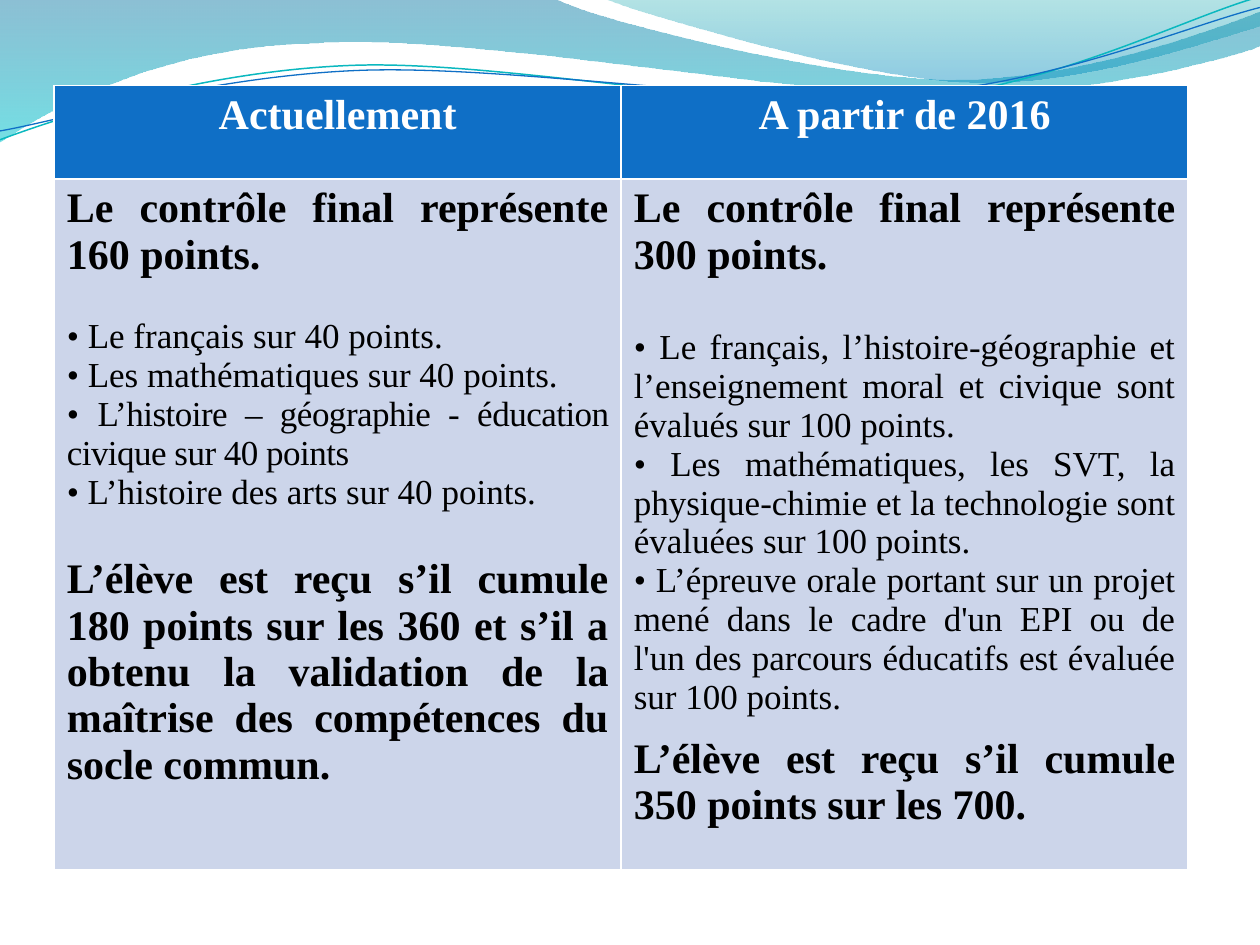
from math import cos, radians, sin

from pptx import Presentation
from pptx.dml.color import RGBColor
from pptx.enum.text import PP_ALIGN as Align
from pptx.oxml.ns import qn
from pptx.util import Inches, Pt
from lxml.etree import SubElement

FONT = "Times New Roman"
WHITE = RGBColor(0xFF, 0xFF, 0xFF)
BLACK = RGBColor(0, 0, 0)
BLUE = RGBColor(0x0F, 0x6F, 0xC6)
PALE = RGBColor(0xCC, 0xD5, 0xEA)
TEAL = RGBColor(0x0A, 0xB8, 0xBF)
DEEP_BLUE = RGBColor(0, 0x74, 0xA1)
CYAN = RGBColor(0, 0xC6, 0xCF)
SEA = RGBColor(0, 0xA1, 0xA9)
SKY = RGBColor(0, 0x8B, 0xBF)

# Wave outlines: points are (x, y) for lines, six numbers for Bezier curves
WAVES = [
    ([(0, 0), (4.4, -0.01), (4.76, 0.17, 6.64, 0.63, 7.58, 0.63),
      (8.53, 0.63, 9.58, 0.26, 10, 0.09), (10.01, 0.36),
      (9.83, 0.44, 8.7, 0.76, 7.46, 0.75), (6.22, 0.75, 3.82, 0.28, 2.57, 0.34),
      (1.29, 0.36, 0.46, 0.83, -0.01, 1.13)],
     [(DEEP_BLUE, 45), (CYAN, 55)]),
    ([(4.79, -0.01), (5.09, 0.11, 6.82, 0.62, 7.69, 0.65),
      (8.56, 0.69, 9.61, 0.32, 10, 0.21), (10, 0)],
     [(SEA, 30), (SKY, 45)]),
]
# Strokes are tilted about their middle
TILT = -2.7
STROKES = [
    ([(0, 1.11), (0.48, 0.93, 1.58, 0.57, 2.77, 0.52),
      (3.95, 0.47, 5.93, 0.89, 7.13, 0.8), (8.33, 0.71, 9.38, 0.15, 9.98, -0.02)],
     TEAL, 0.85),
    ([(0, 1.04), (0.47, 0.96, 1.64, 0.61, 2.83, 0.56),
      (4.03, 0.51, 5.97, 0.84, 7.17, 0.75), (8.36, 0.67, 9.41, 0.21, 10, 0.06)],
     BLUE, 0.75),
]

# Table paragraphs: style, space before in points, runs of (text, letter spacing)
HEADERS = ["Actuellement", "A partir de 2016"]
BODIES = [
    [("strong", 0, [("Le contrôle final représente 160 points.", 0)]),
     ("item", 22.5, [("• Le français sur 40 points.", 0)]),
     ("item", 0, [("• Les mathématiques sur 40 points.", 0)]),
     ("item", 0, [("• ", 0),
                  ("L’histoire – géographie - éducation civique sur 40 points", -0.3)]),
     ("bullet", 0, [(" L’histoire des arts sur 40 points.", 0)]),
     ("strong", 25.5, [("L’élève est reçu s’il cumule 180 points sur les 360 et s’il a "
                        "obtenu la validation de la maîtrise des compétences du socle "
                        "commun.", 0)])],
    [("strong", 0, [("Le contrôle final représente 300 points.", 0)]),
     ("item", 28.8, [("• Le français, l’histoire-géographie et l’enseignement moral et "
                      "civique sont évalués sur 100 points.", 0)]),
     ("item", 0, [("• Les mathématiques, les SVT, la physique-chimie et la technologie "
                   "sont évaluées sur 100 points.", 0)]),
     ("item", 0, [("• L’épreuve orale portant sur un projet mené dans le cadre d'un EPI "
                   "ou de l'un des parcours éducatifs est évaluée sur 100 points.", 0)]),
     ("strong", 11, [("L’élève est reçu s’il cumule 350 points sur les 700.", 0)])],
]
TABLE_BOX = (0.43, 0.68, 9, 6.22)
ROW_HEIGHTS = (0.74, 5.48)


def pairs(segment):
    return list(zip(segment[::2], segment[1::2]))


def level(segments):
    """Turn an outline back to level about the middle of its end points."""
    (x1, y1), (x2, y2) = segments[0], segments[-1][-2:]
    mid_x, mid_y = (x1 + x2) / 2, (y1 + y2) / 2
    c, s = cos(radians(-TILT)), sin(radians(-TILT))
    return [[value for x, y in pairs(segment)
             for value in (mid_x + (x - mid_x) * c - (y - mid_y) * s,
                           mid_y + (x - mid_x) * s + (y - mid_y) * c)]
            for segment in segments]


def add_outline(page, segments, close):
    ends = [(Inches(s[-2]), Inches(s[-1])) for s in segments]
    builder = page.shapes.build_freeform(*ends[0], scale=1.0)
    builder.add_line_segments(ends[1:], close=close)
    shape = builder.convert_to_shape()
    shape.shadow.inherit = False
    # Bend the straight sides that have control points
    sides = list(shape.element.iter(qn("a:lnTo")))
    for side, segment in zip(sides, segments[1:]):
        if len(segment) == 6:
            side.tag = qn("a:cubicBezTo")
            for point in list(side):
                side.remove(point)
            for x, y in pairs(segment):
                SubElement(side, qn("a:pt"), x=str(Inches(x) - shape.left),
                           y=str(Inches(y) - shape.top))
    return shape


def add_wave(page, segments, stops):
    wave = add_outline(page, segments, True)
    wave.line.fill.background()
    wave.fill.gradient()
    wave.fill.gradient_angle = 270
    for stop, (color, _) in zip(wave.fill.gradient_stops, stops):
        stop.color.rgb = color
    for node, (_, opacity) in zip(wave.element.iter(qn("a:srgbClr")), stops):
        SubElement(node, qn("a:alpha"), val=str(opacity * 1000))


def add_stroke(page, segments, color, width):
    stroke = add_outline(page, level(segments), False)
    stroke.rotation = TILT
    stroke.fill.background()
    stroke.line.color.rgb = color
    stroke.line.width = Pt(width)


def fill_cell(cell, color):
    cell.fill.solid()
    cell.fill.fore_color.rgb = color


def write_run(para, text, size, bold, color, spacing=0):
    span = para.add_run()
    span.text = text
    span.font.name = FONT
    span.font.size = Pt(size)
    span.font.bold = bold
    span.font.color.rgb = color
    if spacing:
        span.font._element.set("spc", str(round(spacing * 100)))


def write_body(frame, paragraphs):
    for index, (style, gap, runs) in enumerate(paragraphs):
        para = frame.add_paragraph() if index else frame.paragraphs[0]
        para.alignment = Align.JUSTIFY
        if gap:
            para.space_before = Pt(gap)
        if style == "bullet":
            properties = para._p.get_or_add_pPr()
            SubElement(properties, qn("a:buFont"), typeface=FONT)
            SubElement(properties, qn("a:buChar"), char="•")
        strong = style == "strong"
        for text, spacing in runs:
            write_run(para, text, 24 if strong else 20, strong, BLACK, spacing)


def main():
    deck = Presentation()
    deck.slide_width, deck.slide_height = Inches(10), Inches(7.5)
    page = deck.slides.add_slide(deck.slide_layouts[6])

    # Wave decoration
    for wave in WAVES:
        add_wave(page, *wave)
    for stroke in STROKES:
        add_stroke(page, *stroke)

    # Comparison table, with the white borders of the default table style
    table = page.shapes.add_table(2, 2, *map(Inches, TABLE_BOX)).table
    for row, height in zip(table.rows, ROW_HEIGHTS):
        row.height = Inches(height)
    for column, (header, body) in enumerate(zip(HEADERS, BODIES)):
        table.columns[column].width = Inches(TABLE_BOX[2] / 2)
        top, bottom = table.cell(0, column), table.cell(1, column)
        fill_cell(top, BLUE)
        fill_cell(bottom, PALE)
        title = top.text_frame.paragraphs[0]
        title.alignment = Align.CENTER
        write_run(title, header, 24, True, WHITE)
        write_body(bottom.text_frame, body)

    deck.save("out.pptx")


if __name__ == "__main__":
    main()
